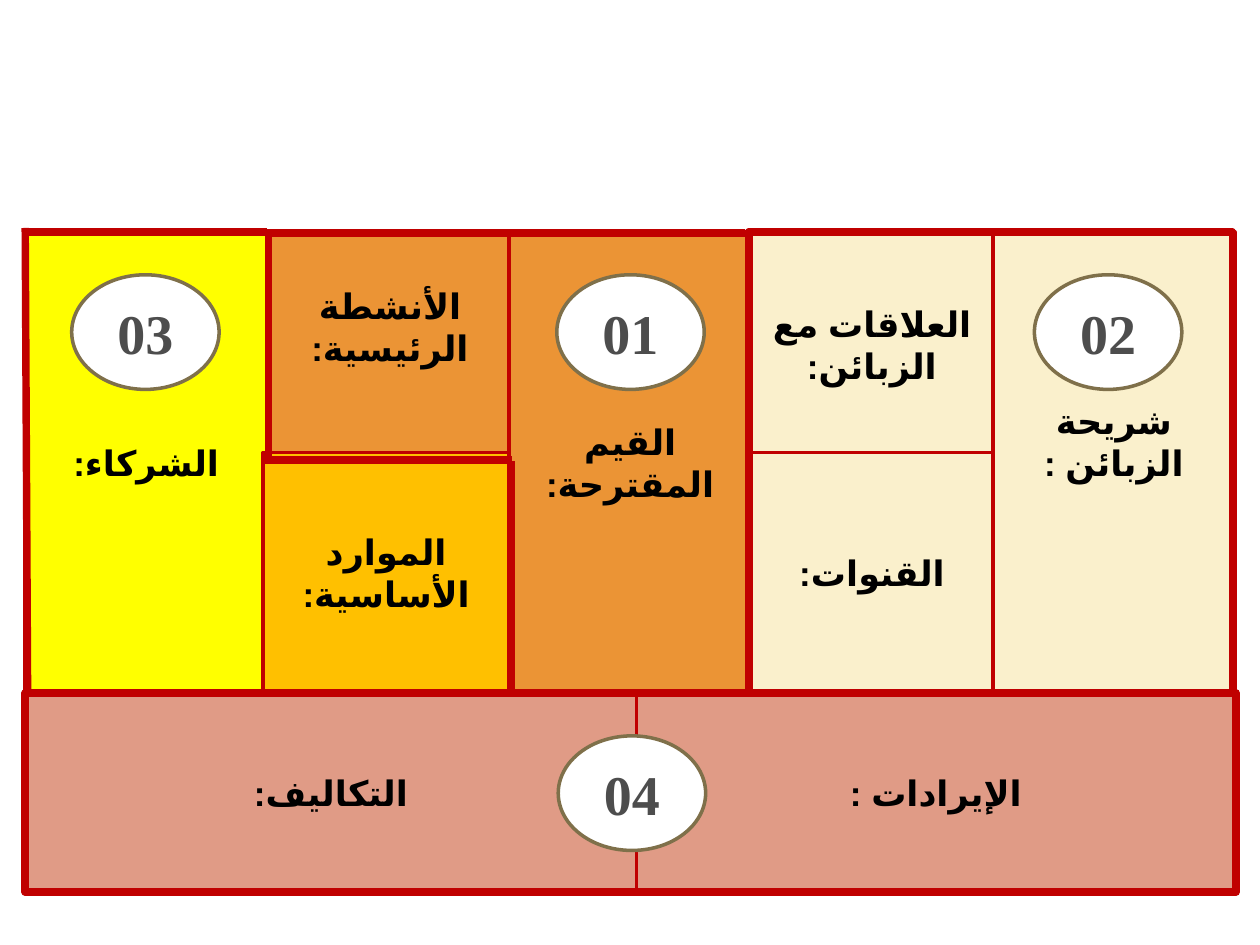
from lxml.etree import SubElement
from pptx import Presentation
from pptx.dml.color import RGBColor
from pptx.enum.shapes import MSO_CONNECTOR as CONN, MSO_SHAPE as SHAPE
from pptx.enum.text import MSO_ANCHOR, PP_ALIGN
from pptx.oxml.ns import qn
from pptx.util import Pt

COLORS = {
    "red": "C00000", "yellow": "FFFF00", "orange": "EB9435", "cream": "FAF0CC",
    "amber": "FFC000", "rose": "E09B86", "white": "FFFFFF", "olive": "7F704A",
    "black": "000000", "gray": "4D4D4D",
}
LEFT, TOP, COL, BODY = 14.4, 132.5, 138.24, 263.5
BASE, FOOT = TOP + BODY, 114.3
SPLIT = 258.5
X = [LEFT + COL * i for i in range(6)]
MID = 363.8
THIN, THICK = 2, 4.25
INSET, LINE = 3.6, 24

BLOCKS = [
    ("الشركاء:", "yellow", X[0], TOP, X[1], BASE, 0),
    ("الأنشطة الرئيسية:", "orange", X[1], TOP + 0.7, X[2] + 2.2, SPLIT + 5.7, LINE),
    ("القيم المقترحة:", "orange", X[2], TOP, X[3], BASE, 0),
    ("العلاقات مع الزبائن:", "cream", X[3], TOP, X[4], SPLIT + 2.2, 0),
    ("شريحة الزبائن :", "cream", X[4], TOP, X[5], BASE, LINE),
    ("الموارد الأساسية:", "amber", X[1] - 2.2, SPLIT, X[2], BASE, 0),
    ("القنوات:", "cream", X[3], SPLIT, X[4], BASE, 0),
    ("التكاليف:", "rose", LEFT, BASE, MID, BASE + FOOT, 0),
    ("الإيرادات :", "rose", MID, BASE, X[5], BASE + FOOT, 0),
]
FRAMES = [
    (LEFT, BASE, X[5] + 0.7, BASE + FOOT - 0.5),
    (X[3] - 1.4, TOP, X[5] - 1.4, BASE),
]
EDGES = [
    (X[0], TOP, X[1], TOP),
    (X[0] + 1.4, BASE + 0.7, X[0], TOP - 2.2),
    (X[1] + 0.8, 262, X[1] + 0.8, TOP - 1.5),
    (X[2] + 1.5, BASE - 1.4, X[2] + 1.5, 263.5),
    (X[1] - 2.2, 262.8, X[2] + 1.5, 262.8),
    (X[3] - 3.6, TOP + 0.7, X[1] + 2.9, TOP + 0.7),
]
BADGES = [("02", 591.1, 157), ("01", 318.2, 157), ("03", 41, 157), ("04", 319, 420.5)]
BADGE_W, BADGE_H = 84.24, 65.5


def rgb(name):
    return RGBColor.from_string(COLORS[name])


def add_block(slide, kind, x1, y1, x2, y2, fill, line, weight):
    s = slide.shapes.add_shape(kind, Pt(x1), Pt(y1), Pt(x2 - x1), Pt(y2 - y1))
    s.shadow.inherit = False
    if fill:
        s.fill.solid()
        s.fill.fore_color.rgb = rgb(fill)
    else:
        s.fill.background()
    s.line.color.rgb = rgb(line)
    s.line.width = Pt(weight)
    return s


def add_text(s, text, size, font, color, rtl=False, extra=0):
    tf = s.text_frame
    tf.word_wrap = True
    tf.vertical_anchor = MSO_ANCHOR.MIDDLE
    tf.margin_left = tf.margin_right = Pt(7.2)
    tf.margin_top, tf.margin_bottom = Pt(INSET), Pt(INSET + extra)
    p = tf.paragraphs[0]
    p.alignment = PP_ALIGN.CENTER
    if rtl:
        p._p.get_or_add_pPr().set("rtl", "1")
    r = p.add_run()
    r.text = text
    r.font.size = Pt(size)
    r.font.bold = True
    r.font.name = font
    r.font.color.rgb = rgb(color)
    if rtl:
        rPr = r._r.get_or_add_rPr()
        rPr.set("lang", "ar-SA")
        SubElement(rPr, qn("a:cs")).set("typeface", font)


def add_edge(slide, x1, y1, x2, y2):
    c = slide.shapes.add_connector(CONN.STRAIGHT, Pt(x1), Pt(y1), Pt(x2), Pt(y2))
    c.line.color.rgb = rgb("red")
    c.line.width = Pt(THICK)
    SubElement(c._element.spPr, qn("a:effectLst"))


def main():
    prs = Presentation()
    prs.slide_width, prs.slide_height = Pt(720), Pt(540)
    slide = prs.slides.add_slide(prs.slide_layouts[6])
    for text, fill, x1, y1, x2, y2, extra in BLOCKS:
        s = add_block(slide, SHAPE.RECTANGLE, x1, y1, x2, y2, fill, "red", THIN)
        add_text(s, text, 20, "Arial", "black", True, extra)
    for frame in FRAMES:
        add_block(slide, SHAPE.RECTANGLE, *frame, None, "red", THICK)
    for edge in EDGES:
        add_edge(slide, *edge)
    for text, x, y in BADGES:
        s = add_block(slide, SHAPE.OVAL, x, y, x + BADGE_W, y + BADGE_H, "white", "olive", THIN)
        add_text(s, text, 32, "Times New Roman", "gray")
    prs.save("out.pptx")


if __name__ == "__main__":
    main()
